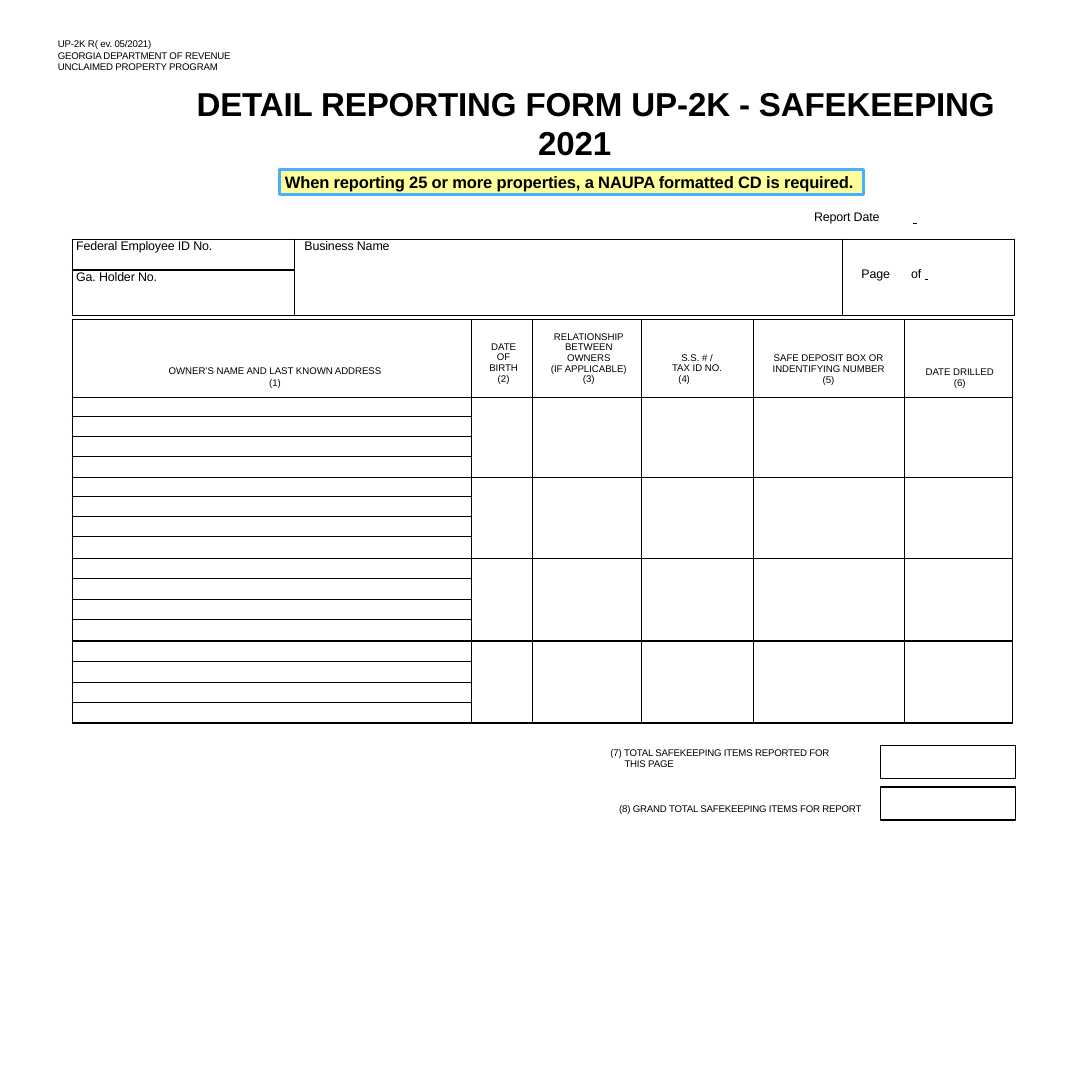
import dataclasses
import typing

import lxml.etree
import pptx
import pptx.dml.color
import pptx.enum.shapes
import pptx.enum.text
import pptx.oxml.ns
import pptx.util

Cm = pptx.util.Cm
Pt = pptx.util.Pt
qn = pptx.oxml.ns.qn
LEFT = pptx.enum.text.PP_ALIGN.LEFT
CENTER = pptx.enum.text.PP_ALIGN.CENTER
BLACK = "000000"
THICK, THIN = 1, 0.5
BLOCK = 4


class Piece(typing.NamedTuple):
    text: str
    underline: bool = False
    tracking: float = -0.1


@dataclasses.dataclass
class Heading:
    text: str
    top: float
    shift: float = 0
    spacing: float | pptx.util.Length = 0.99


@dataclasses.dataclass
class Total:
    text: str
    left: float
    top: float
    height: float
    box_top: float
    spacing: float | pptx.util.Length
    before: float


HEADINGS = [
    Heading("OWNER’S NAME AND LAST KNOWN ADDRESS\n(1)", 1.17, 0.16, Pt(8.3)),
    Heading("DATE\nOF\nBIRTH\n(2)", 0.56, 0.08),
    Heading("RELATIONSHIP\nBETWEEN\nOWNERS\n(IF APPLICABLE)\n(3)", 0.31, 0.1),
    Heading("S.S. # /\nTAX ID NO.", 0.84),
    Heading("SAFE DEPOSIT BOX OR\nINDENTIFYING NUMBER\n(5)", 0.86),
    Heading("DATE DRILLED\n(6)", 1.18, 0.08, Pt(8.3)),
]
TOTALS = [
    Total("(7) TOTAL SAFEKEEPING ITEMS REPORTED FOR\nTHIS PAGE",
          15.6, 19.08, 0.66, 19.08, Pt(8.3), 1.3),
    Total("(8) GRAND TOTAL SAFEKEEPING ITEMS FOR REPORT",
          15.82, 20.52, 0.36, 20.14, 1.0, 0.9),
]
HOLDER_COLUMNS = [5.69, 14.02, 4.39]
HOLDER_ROWS = [0.79, 1.17]
DETAIL_COLUMNS = [10.21, 1.57, 2.77, 2.87, 3.86, 2.77]
DETAIL_ROWS = [1.98, 0.48, 0.53, 0.51, 0.53, 0.48, 0.53, 0.51, 0.56,
               0.51, 0.53, 0.51, 0.56, 0.53, 0.53, 0.51, 0.53]


def color(value: str) -> pptx.dml.color.RGBColor:
    return pptx.dml.color.RGBColor.from_string(value)


def write(frame, text: str | tuple[Piece, ...], *, size: float, bold: bool = False,
          align=LEFT, spacing=1.0, before: float = 0, left: float = 0,
          first: float = 0, right: float = 0, tabs: tuple[float, ...] = ()) -> None:
    para = frame.paragraphs[0]
    if para.runs:
        para = frame.add_paragraph()
    para.alignment = align
    para.line_spacing = spacing
    para.space_before = Pt(before)
    layout = para._p.get_or_add_pPr()
    for name, length in (("marL", left), ("indent", first), ("marR", right)):
        layout.set(name, str(int(Cm(length))))
    if tabs:
        stops = lxml.etree.SubElement(layout, qn("a:tabLst"))
        for stop in tabs:
            lxml.etree.SubElement(stops, qn("a:tab"), pos=str(int(Cm(stop))), algn="l")
    for piece in (Piece(text),) if isinstance(text, str) else text:
        for index, words in enumerate(piece.text.split("\n")):
            if index:
                para.add_line_break()
            span = para.add_run()
            span.text = words
            span.font.name = "Arial"
            span.font.size = Pt(size)
            span.font.bold = bold
            span.font.underline = piece.underline
            span.font.color.rgb = color(BLACK)
            span._r.get_or_add_rPr().set("spc", str(round(piece.tracking * 100)))


def set_margins(target, top: float = 0, left: float = 0) -> None:
    target.margin_left = Cm(left)
    target.margin_top = Cm(top)
    target.margin_right = target.margin_bottom = 0


def add_text_box(page, left: float, top: float, width: float, height: float):
    box = page.shapes.add_textbox(Cm(left), Cm(top), Cm(width), Cm(height))
    frame = box.text_frame
    frame.word_wrap = True
    set_margins(frame, 0.03)
    return frame


def add_box(page, left: float, top: float, width: float, height: float, *,
            line: str, weight: float, fill: str | None = None):
    box = page.shapes.add_shape(pptx.enum.shapes.MSO_SHAPE.RECTANGLE,
                                Cm(left), Cm(top), Cm(width), Cm(height))
    box.shadow.inherit = False
    box.line.color.rgb = color(line)
    box.line.width = Pt(weight)
    if fill:
        box.fill.solid()
        box.fill.fore_color.rgb = color(fill)
    else:
        box.fill.background()
    return box


def add_grid(page, left: float, top: float, columns: list[float], rows: list[float]):
    grid = page.shapes.add_table(len(rows), len(columns), Cm(left), Cm(top),
                                 Cm(sum(columns)), Cm(sum(rows))).table
    grid.first_row = grid.horz_banding = False
    for column, width in zip(grid.columns, columns):
        column.width = Cm(width)
    for row, height in zip(grid.rows, rows):
        row.height = Cm(height)
    for cell in grid.iter_cells():
        set_margins(cell)
    return grid


def set_borders(cell, left: float, right: float, top: float, bottom: float) -> None:
    properties = cell._tc.get_or_add_tcPr()
    for side, weight in zip("LRTB", (left, right, top, bottom)):
        line = lxml.etree.SubElement(properties, qn(f"a:ln{side}"), w=str(int(Pt(weight))))
        fill = lxml.etree.SubElement(line, qn("a:solidFill"))
        lxml.etree.SubElement(fill, qn("a:srgbClr"), val=BLACK)
    cell.fill.background()


def finish_grid(grid, block: int = 1) -> None:
    last = len(grid.columns) - 1
    for row in range(len(grid.rows)):
        for column in range(last + 1):
            cell = grid.cell(row, column)
            inside = column == 0 and row > 0
            set_borders(cell,
                        THICK if column == 0 else THIN,
                        THICK if column == last else THIN,
                        THIN if inside and (row - 1) % block else THICK,
                        THIN if inside and row % block else THICK)
            if not cell.text_frame.text:
                lxml.etree.SubElement(cell.text_frame.paragraphs[0]._p,
                                      qn("a:endParaRPr"), sz="700")


def add_holder_table(page) -> None:
    grid = add_grid(page, 1.85, 6.12, HOLDER_COLUMNS, HOLDER_ROWS)
    for column in (1, 2):
        grid.cell(0, column).merge(grid.cell(1, column))
    for row, column, label, left in ((0, 0, "Federal Employee ID No.", 0.1),
                                     (1, 0, "Ga. Holder No.", 0.1),
                                     (0, 1, "Business Name", 0.25)):
        write(grid.cell(row, column).text_frame, label, size=9, spacing=Pt(10.3), left=left)
    page_cell = grid.cell(0, 2)
    set_margins(page_cell, 0.71)
    write(page_cell.text_frame,
          (Piece("Page"), Piece("\t", True), Piece("of ", tracking=0), Piece(" \t", True, 0)),
          size=9, left=0.48, tabs=(2.54, 4.11))
    finish_grid(grid)


def add_detail_table(page) -> None:
    grid = add_grid(page, 1.85, 8.18, DETAIL_COLUMNS, DETAIL_ROWS)
    for row in range(1, len(DETAIL_ROWS), BLOCK):
        for column in range(1, len(DETAIL_COLUMNS)):
            grid.cell(row, column).merge(grid.cell(row + BLOCK - 1, column))
    for column, heading in enumerate(HEADINGS):
        cell = grid.cell(0, column)
        set_margins(cell, heading.top, heading.shift)
        write(cell.text_frame, (Piece(heading.text, tracking=0),), size=7,
              align=CENTER, spacing=heading.spacing)
    write(grid.cell(0, 3).text_frame, "(4)", size=7, left=0.96, spacing=0.99)
    finish_grid(grid, BLOCK)


def main() -> None:
    deck = pptx.Presentation()
    deck.slide_width = deck.slide_height = Cm(27.94)
    page = deck.slides.add_slide(deck.slide_layouts[6])

    banner = add_box(page, 7.16, 4.34, 14.94, 0.64, line="4BAEFF", weight=2.04, fill="FFFF99")
    frame = banner.text_frame
    frame.word_wrap = True
    frame.vertical_anchor = pptx.enum.text.MSO_ANCHOR.TOP
    set_margins(frame, 0.05)
    write(frame, "When reporting 25 or more properties, a NAUPA formatted CD is required.",
          size=12, bold=True, before=1.7, left=0.13)

    title = add_text_box(page, 5, 2.13, 20.73, 2.06)
    write(title, "DETAIL REPORTING FORM UP-2K - SAFEKEEPING", size=24, bold=True,
          spacing=Pt(28.2), before=1, left=0.03)
    write(title, "2021", size=24, bold=True, align=CENTER, spacing=Pt(28.2), right=1.32)

    write(add_text_box(page, 20.8, 5.33, 4.85, 0.46),
          (Piece("Report Date\t"), Piece(" \t", True, 0)),
          size=9, before=1, left=0.03, tabs=(1.93, 4.83))
    add_holder_table(page)
    add_detail_table(page)

    for total in TOTALS:
        write(add_text_box(page, total.left, total.top, 6.5, total.height), total.text,
              size=7, spacing=total.spacing, before=total.before, left=0.38, first=-0.36)
        add_box(page, 22.53, total.box_top, 3.45, 0.84, line=BLACK, weight=0.96)

    agency = add_text_box(page, 1.45, 0.94, 4.67, 0.97)
    write(agency, (Piece("UP-2K "), Piece("R", tracking=-5.1), Piece("( ev. 05/2021)")),
          size=7, spacing=Pt(8.3), before=0.9, left=0.03)
    write(agency, "GEORGIA DEPARTMENT OF REVENUE\nUNCLAIMED PROPERTY PROGRAM",
          size=7, spacing=Pt(8.3), before=0.3, left=0.03)
    deck.save("out.pptx")


if __name__ == "__main__":
    main()
